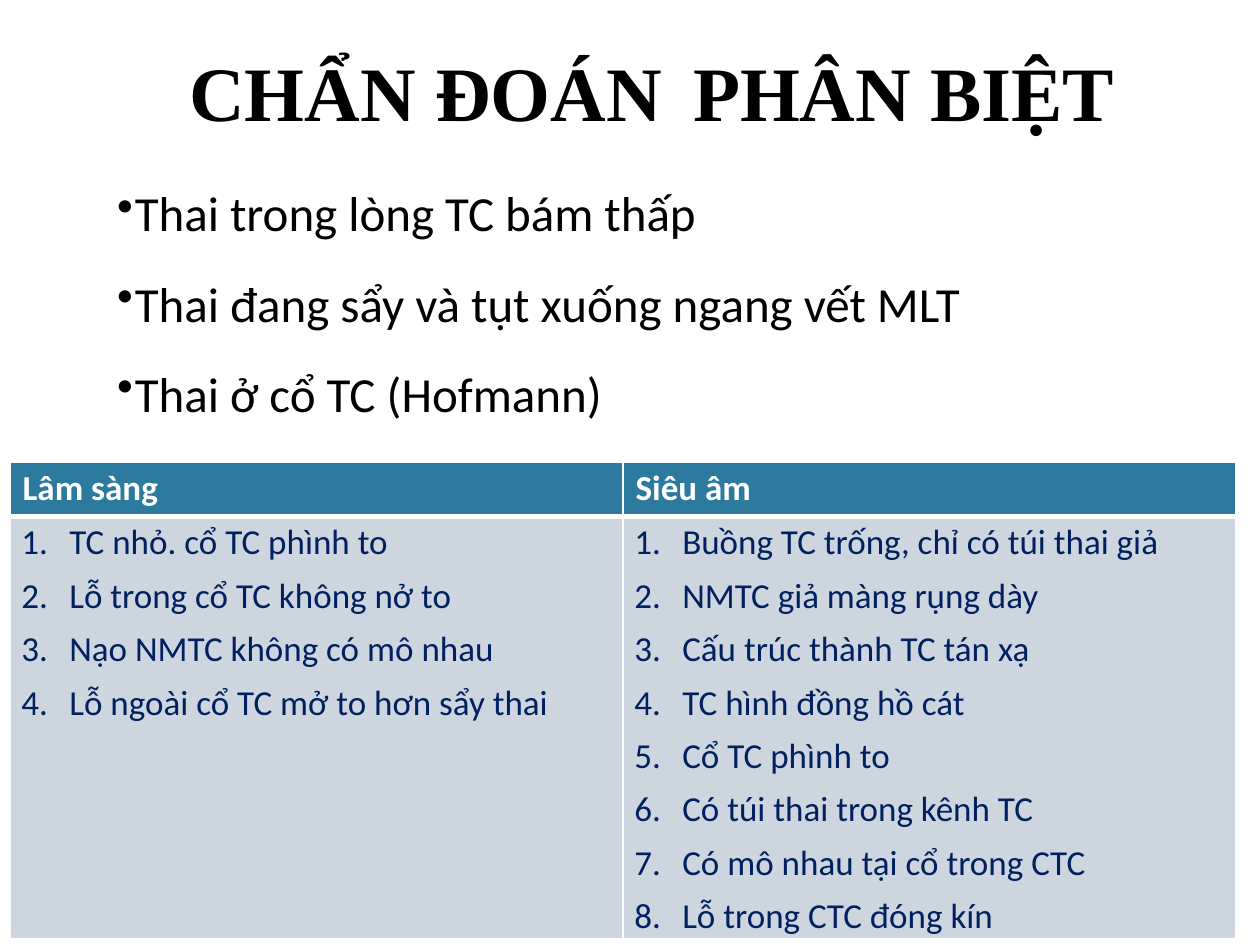
from dataclasses import dataclass

import pptx
import pptx.dml.color
import pptx.enum.text
import pptx.oxml.ns
import pptx.oxml.xmlchemy
import pptx.util
from lxml import etree
from pptx.util import Inches, Pt

BLACK, WHITE, NAVY = "000000", "FFFFFF", "002060"
HEADER_FILL, BODY_FILL = "2C7B9F", "CDD6DF"
COLUMN_WIDTH = 4.865
HEADER_HEIGHT, BODY_HEIGHT = 0.43, 3.35


@dataclass(frozen=True)
class FindingColumn:
    heading: str
    findings: tuple[str, ...]


DIAGNOSES = (
    "Thai trong lòng TC bám thấp",
    "Thai đang sẩy và tụt xuống ngang vết MLT",
    "Thai ở cổ TC (Hofmann)",
)
COLUMNS = (
    FindingColumn("Lâm sàng", (
        "TC nhỏ. cổ TC phình to",
        "Lỗ trong cổ TC không nở to",
        "Nạo NMTC không có mô nhau",
        "Lỗ ngoài cổ TC mở to hơn sẩy thai",
    )),
    FindingColumn("Siêu âm", (
        "Buồng TC trống, chỉ có túi thai giả",
        "NMTC giả màng rụng dày",
        "Cấu trúc thành TC tán xạ",
        "TC hình đồng hồ cát",
        "Cổ TC phình to",
        "Có túi thai trong kênh TC",
        "Có mô nhau tại cổ trong CTC",
        "Lỗ trong CTC đóng kín",
    )),
)


def color(value: str) -> pptx.dml.color.RGBColor:
    return pptx.dml.color.RGBColor.from_string(value)


def add_element(parent, tag: str, **attributes):
    element = etree.SubElement(parent, pptx.oxml.ns.qn(tag))
    for name, value in attributes.items():
        element.set(name, str(value))
    return element


def write(frame, lines, *, size, fill=BLACK, font="Calibri", bold=False,
          align=pptx.enum.text.PP_ALIGN.LEFT, gap=0, margin=0.0, indent=0.0,
          bullet=None, numbered=False, tab=None) -> None:
    """Fill a text frame with one paragraph per line; gap is the space between them."""
    for index, line in enumerate(lines):
        paragraph = frame.paragraphs[0] if index == 0 else frame.add_paragraph()
        paragraph.alignment = align
        paragraph.space_before = Pt(gap if index else 0)
        properties = paragraph._p.get_or_add_pPr()
        properties.set("marL", str(Inches(margin)))
        properties.set("indent", str(Inches(indent)))
        if bullet:
            add_element(properties, "a:buSzPct", val=96000)
            add_element(properties, "a:buChar", char=bullet)
        elif numbered:
            add_element(properties, "a:buAutoNum", type="arabicPeriod")
        if tab is not None:
            tabs = add_element(properties, "a:tabLst")
            add_element(tabs, "a:tab", pos=Inches(tab), algn="l")
        run = paragraph.add_run()
        run.text = line
        run.font.name = font
        run.font.size = Pt(size)
        run.font.bold = bold
        run.font.color.rgb = color(fill)


def prepare_frame(frame, top: float) -> None:
    frame.word_wrap = True
    frame.margin_left = frame.margin_right = frame.margin_bottom = 0
    frame.margin_top = Inches(top)
    frame.auto_size = pptx.enum.text.MSO_AUTO_SIZE.SHAPE_TO_FIT_TEXT


def style_cell(cell, fill: str, top_line: float, bottom_line: float) -> None:
    cell.margin_left = cell.margin_right = cell.margin_bottom = 0
    cell.margin_top = Inches(0.04)
    properties = cell._tc.get_or_add_tcPr()
    widths = {"a:lnL": 1, "a:lnR": 1, "a:lnT": top_line, "a:lnB": bottom_line}
    for tag, width in widths.items():
        line = add_element(properties, tag, w=Pt(width))
        add_element(add_element(line, "a:solidFill"), "a:srgbClr", val=WHITE)
    cell.fill.solid()
    cell.fill.fore_color.rgb = color(fill)


def add_title(slide) -> None:
    title = slide.shapes.title
    title.left, title.top = Inches(1.39), Inches(0.34)
    title.width, title.height = Inches(7.56), Inches(0.75)
    prepare_frame(title.text_frame, 0.01)
    title.text_frame.vertical_anchor = pptx.enum.text.MSO_ANCHOR.MIDDLE
    write(title.text_frame, ["CHẨN ĐOÁN\tPHÂN BIỆT"], size=44, bold=True,
          font="Times New Roman", align=pptx.enum.text.PP_ALIGN.CENTER,
          margin=0.01, tab=4.1)


def add_diagnoses(slide) -> None:
    box = slide.shapes.add_textbox(Inches(0.92), Inches(1.19), Inches(7.51), Inches(2.18))
    prepare_frame(box.text_frame, 0.26)
    write(box.text_frame, DIAGNOSES, size=28, gap=18, margin=0.15, indent=-0.14,
          bullet="•", tab=0.15)


def add_findings_table(slide) -> None:
    table = slide.shapes.add_table(
        2, len(COLUMNS), Inches(0.08), Inches(3.67),
        Inches(COLUMN_WIDTH * len(COLUMNS)), Inches(HEADER_HEIGHT + BODY_HEIGHT),
    ).table
    table.horz_banding = False
    table.rows[0].height = Inches(HEADER_HEIGHT)
    table.rows[1].height = Inches(BODY_HEIGHT)
    for index, column in enumerate(COLUMNS):
        table.columns[index].width = Inches(COLUMN_WIDTH)
        header, body = table.cell(0, index), table.cell(1, index)
        style_cell(header, HEADER_FILL, top_line=1, bottom_line=3)
        style_cell(body, BODY_FILL, top_line=3, bottom_line=1)
        write(header.text_frame, [column.heading], size=20, fill=WHITE, bold=True,
              margin=0.1)
        write(body.text_frame, column.findings, size=20, fill=NAVY, gap=6,
              margin=0.47, indent=-0.38, numbered=True, tab=0.47)


def main() -> None:
    presentation = pptx.Presentation()
    presentation.slide_width, presentation.slide_height = Inches(10), Inches(7.5)
    slide = presentation.slides.add_slide(presentation.slide_layouts[5])
    add_title(slide)
    add_diagnoses(slide)
    add_findings_table(slide)
    presentation.save("out.pptx")


if __name__ == "__main__":
    main()
